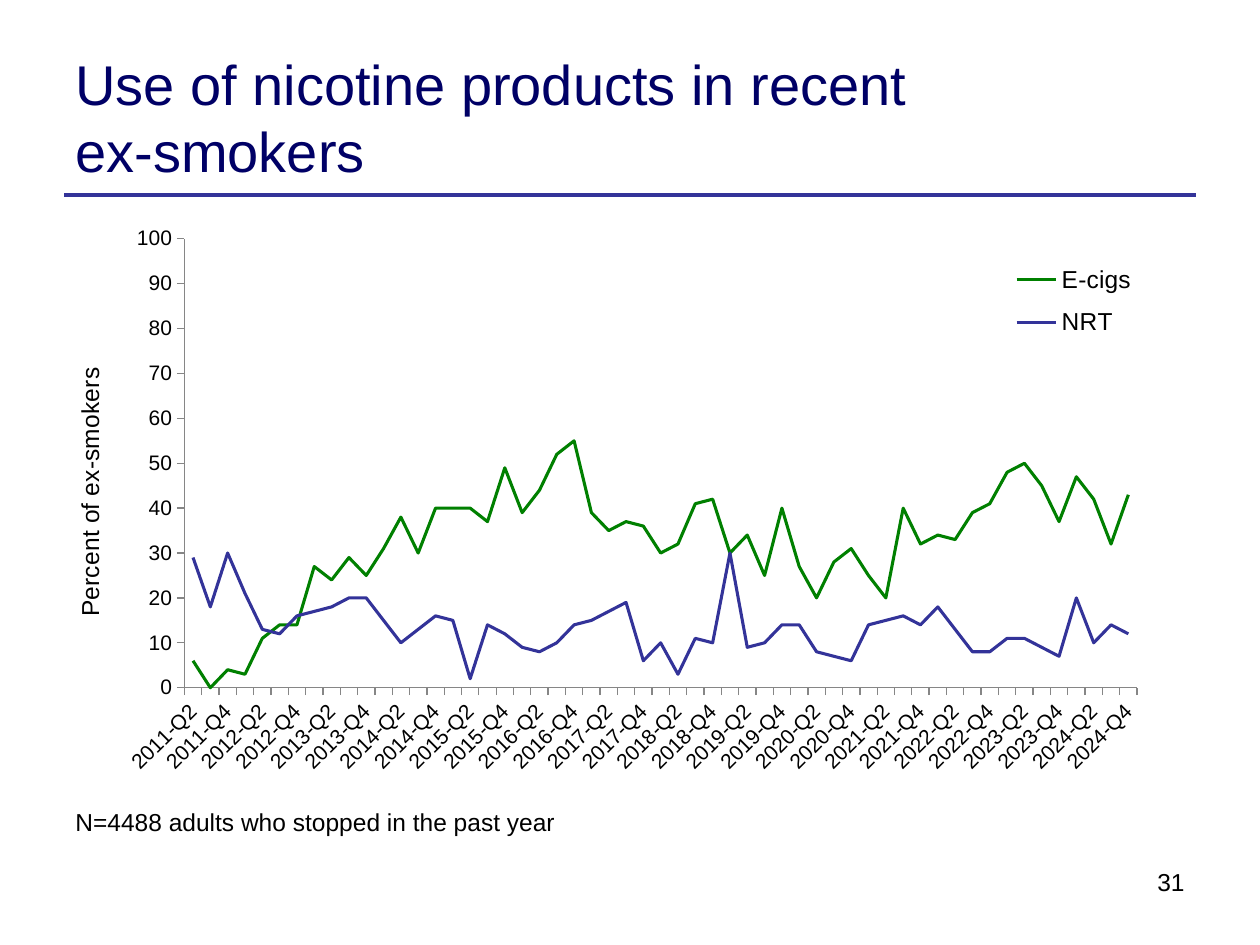
from typing import NamedTuple

import pptx
import pptx.chart.data
import pptx.dml.color
import pptx.enum.chart
import pptx.enum.shapes
import pptx.enum.text
import pptx.oxml.ns
import pptx.oxml.xmlchemy
import pptx.util

Cm = pptx.util.Cm
Pt = pptx.util.Pt
qn = pptx.oxml.ns.qn
OxmlElement = pptx.oxml.xmlchemy.OxmlElement
RGBColor = pptx.dml.color.RGBColor
Align = pptx.enum.text.PP_ALIGN
Anchor = pptx.enum.text.MSO_ANCHOR
Tick = pptx.enum.chart.XL_TICK_MARK

FONT = "Arial"
BLACK = RGBColor(0x00, 0x00, 0x00)
NAVY = RGBColor(0x00, 0x00, 0x66)
BLUE = RGBColor(0x33, 0x33, 0x99)
GREEN = RGBColor(0x00, 0x80, 0x00)
GREY = RGBColor(0x86, 0x86, 0x86)


class Label(NamedTuple):
    text: str
    left: float
    top: float
    width: float
    height: float
    size: int = 14
    color: RGBColor = BLACK
    align: Align = Align.LEFT
    anchor: Anchor = Anchor.TOP


class Product(NamedTuple):
    name: str
    color: RGBColor
    percents: list[int]


LABELS = [
    Label("Use of nicotine products in recent ex-smokers",
          1.27, 0.76, 19.08, 3.18, 32, NAVY, anchor=Anchor.MIDDLE),
    Label("N=4488 adults who stopped in the past year", 1.27, 16.15, 20.98, 0.86),
    Label("31", 17.09, 17.35, 7.04, 1.32, align=Align.RIGHT),
]

QUARTERS = [f"{year}-Q{q}" for year in range(2011, 2025) for q in range(1, 5)][1:]

PRODUCTS = [
    Product("E-cigs", GREEN, [
        6, 0, 4, 3, 11, 14, 14, 27, 24, 29, 25, 31, 38, 30, 40, 40, 40, 37, 49,
        39, 44, 52, 55, 39, 35, 37, 36, 30, 32, 41, 42, 30, 34, 25, 40, 27, 20,
        28, 31, 25, 20, 40, 32, 34, 33, 39, 41, 48, 50, 45, 37, 47, 42, 32, 43]),
    Product("NRT", BLUE, [
        29, 18, 30, 21, 13, 12, 16, 17, 18, 20, 20, 15, 10, 13, 16, 15, 2, 14,
        12, 9, 8, 10, 14, 15, 17, 19, 6, 10, 3, 11, 10, 30, 9, 10, 14, 14, 8, 7,
        6, 14, 15, 16, 14, 18, 13, 8, 8, 11, 11, 9, 7, 20, 10, 14, 12]),
]


def set_font(font, size: int, color: RGBColor = BLACK) -> None:
    font.name = FONT
    font.size = Pt(size)
    font.bold = False
    font.color.rgb = color


def add_label(s, label: Label) -> None:
    sp = s.shapes.add_textbox(Cm(label.left), Cm(label.top),
                              Cm(label.width), Cm(label.height))
    tf = sp.text_frame
    tf.word_wrap = True
    tf.vertical_anchor = label.anchor
    p = tf.paragraphs[0]
    p.alignment = label.align
    r = p.add_run()
    r.text = label.text
    set_font(r.font, label.size, label.color)


def add_rule(s) -> None:
    cx = s.shapes.add_connector(pptx.enum.shapes.MSO_CONNECTOR.STRAIGHT,
                                Cm(1.3), Cm(3.94), Cm(24.1), Cm(3.94))
    cx.line.color.rgb = BLUE
    cx.line.width = Pt(2.25)
    cx._element.spPr.append(OxmlElement("a:effectLst"))


def add_value(parent, tag: str, value):
    child = OxmlElement(tag)
    child.set("val", str(value))
    parent.append(child)
    return child


def set_layout(element, index: int, inner: bool = False, **position: float) -> None:
    for old in element.findall(qn("c:layout")):
        element.remove(old)
    layout = OxmlElement("c:layout")
    manual = OxmlElement("c:manualLayout")
    layout.append(manual)
    if inner:
        add_value(manual, "c:layoutTarget", "inner")
    for mode in ("xMode", "yMode"):
        add_value(manual, f"c:{mode}", "edge")
    for key, value in position.items():
        add_value(manual, f"c:{key}", value)
    element.insert(index, layout)


def style_axis(axis) -> None:
    axis.has_major_gridlines = False
    axis.major_tick_mark = Tick.OUTSIDE
    axis.minor_tick_mark = Tick.NONE
    axis.format.line.color.rgb = GREY
    axis.format.line.width = Pt(0.75)
    set_font(axis.tick_labels.font, 12)


def style_axes(chart) -> None:
    quarters, percent = chart.category_axis, chart.value_axis
    for axis in (quarters, percent):
        style_axis(axis)
    ax = quarters._element
    ax.find(qn("c:txPr")).find(qn("a:bodyPr")).set("rot", "-2700000")
    skip = add_value(ax, "c:tickLblSkip", 2)
    ax.find(qn("c:noMultiLvlLbl")).addprevious(skip)

    percent.minimum_scale = 0
    percent.maximum_scale = 100
    percent.major_unit = 10
    title = percent.axis_title
    tf = title.text_frame
    r = tf.paragraphs[0].add_run()
    r.text = "Percent of ex-smokers"
    set_font(r.font, 14)
    body = tf._txBody.find(qn("a:bodyPr"))
    body.set("rot", "-5400000")
    body.set("vert", "horz")
    set_layout(title._element, 1, x=0.02, y=0.26)


def add_line_chart(s, products: list[Product]) -> None:
    data = pptx.chart.data.CategoryChartData()
    data.categories = QUARTERS
    for product in products:
        data.add_series(product.name, product.percents)
    chart = s.shapes.add_chart(pptx.enum.chart.XL_CHART_TYPE.LINE, Cm(0.94), Cm(4.22),
                               Cm(23.14), Cm(11.91), data).chart
    set_font(chart.font, 18)
    chart.has_title = False
    chart.plots[0].vary_by_categories = False
    for series, product in zip(chart.plots[0].series, products):
        series.smooth = False
        series.format.line.color.rgb = product.color
        series.format.line.width = Pt(1.75)
    style_axes(chart)
    set_layout(chart._chartSpace.chart.plotArea, 0, inner=True,
               x=0.12, y=0.05, w=0.83, h=0.76)

    chart.has_legend = True
    legend = chart.legend
    legend.position = pptx.enum.chart.XL_LEGEND_POSITION.RIGHT
    legend.include_in_layout = False
    set_font(legend.font, 14)
    set_layout(legend._element, 1, x=0.82, y=0.07, w=0.15, h=0.17)


def main() -> None:
    prs = pptx.Presentation()
    prs.slide_width, prs.slide_height = Cm(25.4), Cm(19.05)
    s = prs.slides.add_slide(prs.slide_layouts[6])
    add_rule(s)
    add_line_chart(s, PRODUCTS)
    for label in LABELS:
        add_label(s, label)
    prs.save("out.pptx")


if __name__ == "__main__":
    main()
